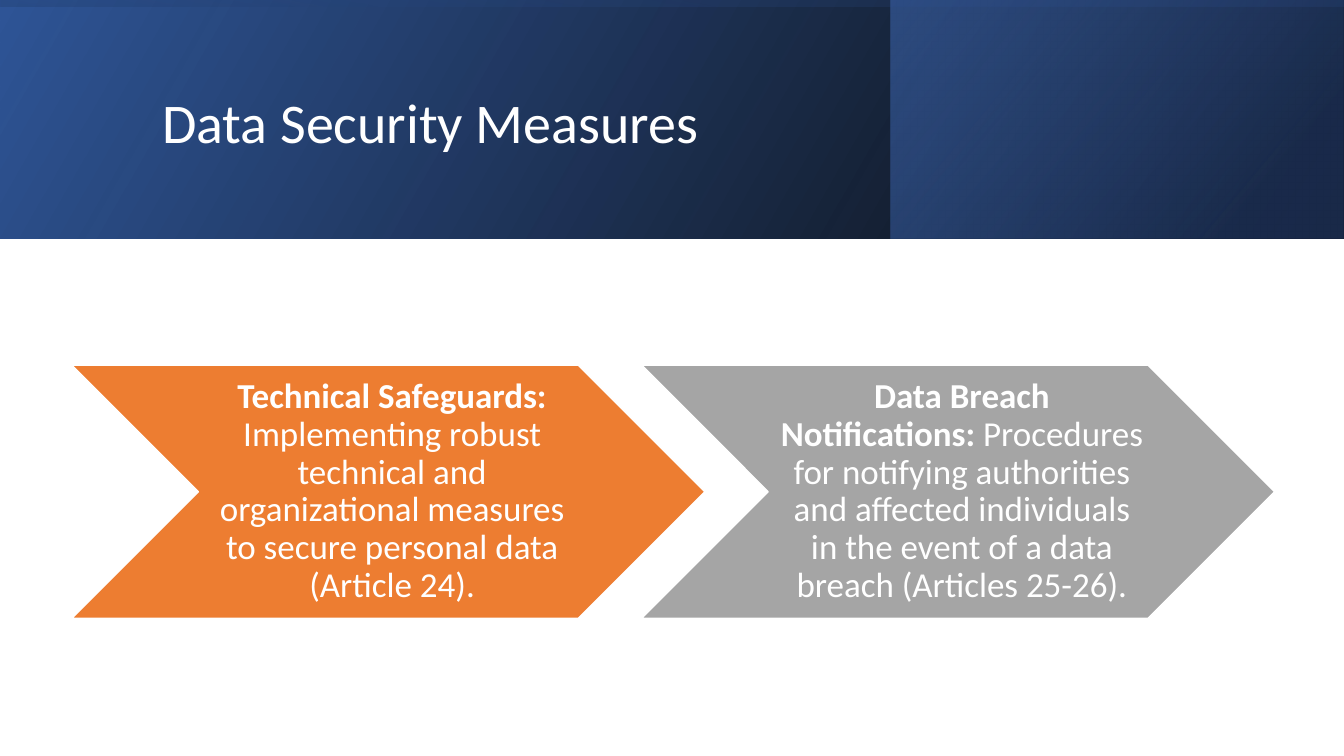
from dataclasses import dataclass

import lxml.etree
import pptx
import pptx.dml.color
import pptx.enum.shapes
import pptx.enum.text
import pptx.oxml.ns
import pptx.util

Pt = pptx.util.Pt
Shapes = pptx.enum.shapes.MSO_SHAPE
Align = pptx.enum.text.PP_ALIGN


@dataclass(frozen=True)
class Theme:
    font: str = "Calibri"
    title_size: float = 40
    body_size: float = 25
    white: str = "FFFFFF"
    black: str = "000000"
    navy: str = "203864"
    deep_blue: str = "2F5597"
    blue: str = "4472C4"
    orange: str = "ED7D31"
    grey: str = "A5A5A5"


@dataclass(frozen=True)
class Box:
    left: float
    top: float
    width: float
    height: float

    def lengths(self) -> tuple:
        return Pt(self.left), Pt(self.top), Pt(self.width), Pt(self.height)


@dataclass(frozen=True)
class GradientStop:
    position: float
    color: str
    opacity: int = 100


@dataclass(frozen=True)
class HeaderPanel:
    box: Box
    start: GradientStop
    end: GradientStop
    clockwise_angle: float
    rotation: float = 0


@dataclass(frozen=True)
class Measure:
    heading: str
    detail: str
    color: str


THEME = Theme()
SLIDE_WIDTH, SLIDE_HEIGHT = 960, 540
HEADER_HEIGHT = 170.6
TURNED_LEFT = (SLIDE_WIDTH - HEADER_HEIGHT) / 2
TITLE_BOX = Box(108.7, 27.4, 765.4, 123.8)
FIRST_CHEVRON = Box(51.3, 260.8, 452.2, 180.9)
CHEVRON_PITCH = 0.9 * FIRST_CHEVRON.width

PANELS = [
    HeaderPanel(Box(0, 0, SLIDE_WIDTH, HEADER_HEIGHT),
                GradientStop(0, THEME.black, 96),
                GradientStop(1, THEME.deep_blue), 330),
    HeaderPanel(Box(636.5, 0, 323, HEADER_HEIGHT),
                GradientStop(0.19, THEME.navy, 68),
                GradientStop(1, THEME.blue, 48), 320),
    HeaderPanel(Box(TURNED_LEFT, -TURNED_LEFT, HEADER_HEIGHT, SLIDE_WIDTH),
                GradientStop(0.23, THEME.deep_blue, 16),
                GradientStop(0.99, THEME.black, 45), 350, rotation=270),
]

MEASURES = [
    Measure("Technical Safeguards:",
            " Implementing robust technical and organizational measures "
            "to secure personal data (Article 24).", THEME.orange),
    Measure("Data Breach Notifications:",
            " Procedures for notifying authorities and affected individuals "
            "in the event of a data breach (Articles 25-26).", THEME.grey),
]


def rgb(color: str) -> pptx.dml.color.RGBColor:
    return pptx.dml.color.RGBColor.from_string(color)


def add_text(paragraph, text: str, *, size: float, bold: bool = False,
             color: str = THEME.white, align=Align.LEFT) -> None:
    paragraph.alignment = align
    paragraph.line_spacing = 0.9
    run = paragraph.add_run()
    run.text = text
    run.font.name = THEME.font
    run.font.size = Pt(size)
    run.font.bold = bold
    run.font.color.rgb = rgb(color)


def add_panel(slide, panel: HeaderPanel) -> None:
    """Draw a mirrored rectangle with a translucent two-stop gradient."""
    shape = slide.shapes.add_shape(Shapes.RECTANGLE, *panel.box.lengths())
    shape.shadow.inherit = False
    shape.line.fill.background()
    shape.rotation = panel.rotation
    shape.element.spPr.find(pptx.oxml.ns.qn("a:xfrm")).set("flipH", "1")
    shape.fill.gradient()
    shape.fill.gradient_angle = 360 - panel.clockwise_angle
    stops = (panel.start, panel.end)
    for target, stop in zip(shape.fill.gradient_stops, stops):
        target.position = stop.position
        target.color.rgb = rgb(stop.color)
    color_elements = shape.element.spPr.iter(pptx.oxml.ns.qn("a:srgbClr"))
    for element, stop in zip(list(color_elements), stops):
        if stop.opacity < 100:
            alpha = lxml.etree.SubElement(element, pptx.oxml.ns.qn("a:alpha"))
            alpha.set("val", str(stop.opacity * 1000))


def add_title(slide, text: str) -> None:
    """Fill the title placeholder and bring it in front of the header."""
    title = slide.shapes.title
    title.left, title.top, title.width, title.height = TITLE_BOX.lengths()
    frame = title.text_frame
    frame.auto_size = pptx.enum.text.MSO_AUTO_SIZE.NONE
    frame.vertical_anchor = pptx.enum.text.MSO_ANCHOR.MIDDLE
    add_text(frame.paragraphs[0], text, size=THEME.title_size)
    title.element.getparent().append(title.element)


def add_chevron(slide, box: Box, measure: Measure) -> None:
    shape = slide.shapes.add_shape(Shapes.CHEVRON, *box.lengths())
    shape.shadow.inherit = False
    shape.fill.solid()
    shape.fill.fore_color.rgb = rgb(measure.color)
    shape.line.color.rgb = rgb(THEME.white)
    shape.line.width = Pt(1)
    frame = shape.text_frame
    frame.word_wrap = True
    frame.vertical_anchor = pptx.enum.text.MSO_ANCHOR.MIDDLE
    frame.margin_left = Pt(7.9)
    frame.margin_top = frame.margin_right = frame.margin_bottom = Pt(2.6)
    paragraph = frame.paragraphs[0]
    for text, bold in ((measure.heading, True), (measure.detail, False)):
        add_text(paragraph, text, size=THEME.body_size, bold=bold,
                 align=Align.CENTER)


def main() -> None:
    presentation = pptx.Presentation()
    presentation.slide_width = Pt(SLIDE_WIDTH)
    presentation.slide_height = Pt(SLIDE_HEIGHT)
    title_only = presentation.slide_layouts.get_by_name("Title Only")
    slide = presentation.slides.add_slide(title_only)
    for panel in PANELS:
        add_panel(slide, panel)
    add_title(slide, "Data Security Measures")
    for index, measure in enumerate(MEASURES):
        box = Box(FIRST_CHEVRON.left + index * CHEVRON_PITCH,
                  FIRST_CHEVRON.top, FIRST_CHEVRON.width, FIRST_CHEVRON.height)
        add_chevron(slide, box, measure)
    presentation.save("out.pptx")


if __name__ == "__main__":
    main()
